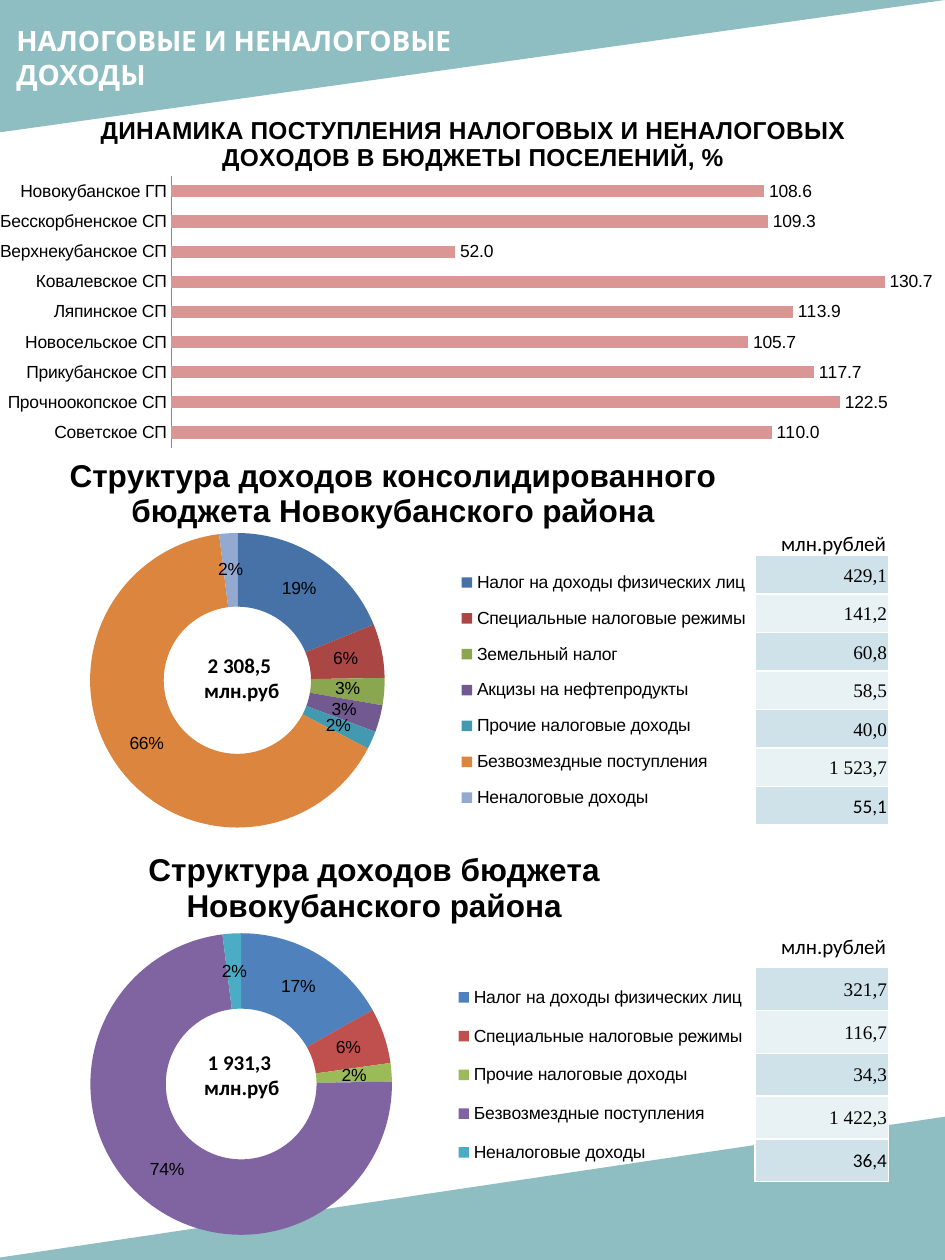
import pptx
import pptx.util
import pptx.chart.data
import pptx.dml.color
import pptx.enum.chart
import pptx.enum.shapes
import pptx.enum.text
import pptx.oxml
import pptx.oxml.ns
from lxml import etree

Inches = pptx.util.Inches
Pt = pptx.util.Pt
RGBColor = pptx.dml.color.RGBColor
Align = pptx.enum.text.PP_ALIGN
Anchor = pptx.enum.text.MSO_ANCHOR
Fit = pptx.enum.text.MSO_AUTO_SIZE
Kind = pptx.enum.chart.XL_CHART_TYPE
qn = pptx.oxml.ns.qn

TEAL = RGBColor(0x51, 0x9A, 0xA0)
WHITE = RGBColor(0xFF, 0xFF, 0xFF)
BLACK = RGBColor(0, 0, 0)
NAVY = RGBColor(0x10, 0x24, 0x3E)
GREY = RGBColor(0x87, 0x87, 0x87)
PINK = RGBColor(0xD9, 0x96, 0x94)
BANDS = RGBColor(0xCF, 0xE2, 0xEA), RGBColor(0xE8, 0xF1, 0xF4)
DEEP = [RGBColor.from_string(c) for c in (
    "4672A8", "AA4644", "8AA64F", "725990", "4299B0", "DC853E", "93A9CF")]
BRIGHT = [RGBColor.from_string(c) for c in (
    "4F81BD", "C0504D", "9BBB59", "8064A2", "4BACC6")]

TOWNS = {
    "Новокубанское ГП": 108.6, "Бесскорбненское СП": 109.3,
    "Верхнекубанское СП": 52.0, "Ковалевское СП": 130.7,
    "Ляпинское СП": 113.9, "Новосельское СП": 105.7,
    "Прикубанское СП": 117.7, "Прочноокопское СП": 122.5,
    "Советское СП": 110.0}
WHOLE = {
    "Налог на доходы физических лиц": 19, "Специальные налоговые режимы": 6,
    "Земельный налог": 3, "Акцизы на нефтепродукты": 3,
    "Прочие налоговые доходы": 2, "Безвозмездные поступления": 66,
    "Неналоговые доходы": 2}
LOCAL = {
    "Налог на доходы физических лиц": 17, "Специальные налоговые режимы": 6,
    "Прочие налоговые доходы": 2, "Безвозмездные поступления": 74,
    "Неналоговые доходы": 2}


def style(font, size, name, color=BLACK, bold=False):
    font.size = Pt(size)
    font.name = name
    font.bold = bold
    font.color.rgb = color


def add_run(para, text, size, name, color=BLACK, bold=False):
    run = para.add_run()
    run.text = text
    style(run.font, size, name, color, bold)


def add_wedge(slide, box, flip):
    kind = pptx.enum.shapes.MSO_SHAPE.RIGHT_TRIANGLE
    shape = slide.shapes.add_shape(kind, *map(Inches, box))
    shape.rotation = 180
    shape._element.spPr.xfrm.set(flip, "1")
    shape.shadow.inherit = False
    shape.line.fill.background()
    shape.fill.solid()
    shape.fill.fore_color.rgb = TEAL
    tint = shape._element.spPr.find(".//" + qn("a:srgbClr"))
    etree.SubElement(tint, qn("a:alpha")).set("val", "64000")


def add_title(slide, text):
    title = slide.shapes.title
    title.left, title.top, title.width, title.height = map(
        Inches, (0.03, 0.14, 4.51, 0.63))
    frame = title.text_frame
    frame.word_wrap = True
    frame.auto_size = Fit.NONE
    frame.vertical_anchor = Anchor.TOP
    para = frame.paragraphs[0]
    para.alignment = Align.LEFT
    add_run(para, text, 16, "Karla", WHITE, True)


def add_unit(slide, top):
    box = slide.shapes.add_textbox(*map(Inches, (6.1, top, 1.05, 0.3)))
    frame = box.text_frame
    frame.word_wrap = False
    frame.auto_size = Fit.SHAPE_TO_FIT_TEXT
    add_run(frame.paragraphs[0], "млн.рублей", 12, "Calibri")


def add_total(slide, top, total, gap):
    box = slide.shapes.add_textbox(*map(Inches, (1.46, top, 0.88, 0.5)))
    frame = box.text_frame
    frame.word_wrap = True
    first, last = frame.paragraphs[0], frame.add_paragraph()
    first.alignment = last.alignment = Align.CENTER
    add_run(first, total, 12, "Calibri", bold=True)
    add_run(last, " ", 12, "Calibri", gap, True)
    add_run(last, "млн.руб", 12, "Calibri", bold=True)


def add_edges(cell):
    props = cell._tc.get_or_add_tcPr()
    for i, side in enumerate(("lnL", "lnR", "lnT", "lnB")):
        props.insert(i, pptx.oxml.parse_xml(
            f'<a:{side} {pptx.oxml.ns.nsdecls("a")} w="12192"><a:solidFill>'
            f'<a:srgbClr val="{WHITE}"/></a:solidFill></a:{side}>'))


def add_sums(slide, top, high, sums):
    count = len(sums)
    frame = slide.shapes.add_table(
        count, 1, *map(Inches, (5.99, top, 1.06, high)))
    table = frame.table
    table.first_row = table.horz_banding = False
    for i, text in enumerate(sums):
        table.rows[i].height = Inches(high / count)
        cell = table.cell(i, 0)
        cell.fill.solid()
        cell.fill.fore_color.rgb = BANDS[i % 2]
        cell.vertical_anchor = Anchor.MIDDLE
        cell.margin_left = cell.margin_right = cell.margin_top = Inches(0.01)
        cell.margin_bottom = 0
        add_edges(cell)
        para = cell.text_frame.paragraphs[0]
        para.alignment = Align.RIGHT
        name = "Calibri" if i == count - 1 else "Times New Roman"
        add_run(para, text, 11, name)


def place(part, index, box, inner=False):
    for old in part.findall(qn("c:layout")):
        part.remove(old)
    layout = etree.Element(qn("c:layout"))
    manual = etree.SubElement(layout, qn("c:manualLayout"))
    pairs = [("layoutTarget", "inner")] if inner else []
    pairs += [("xMode", "edge"), ("yMode", "edge")]
    pairs += zip("xywh", map(str, box))
    for tag, val in pairs:
        etree.SubElement(manual, qn("c:" + tag)).set("val", val)
    part.insert(index, layout)


def add_chart(slide, kind, box, data, title, size, area):
    source = pptx.chart.data.CategoryChartData()
    source.categories = list(data)
    source.add_series("Series 1", list(data.values()))
    chart = slide.shapes.add_chart(kind, *map(Inches, box), source).chart
    style(chart.font, 10, "Arial")
    chart.has_title = True
    para = chart.chart_title.text_frame.paragraphs[0]
    add_run(para, title, size, "Arial", bold=True)
    chart.has_legend = False
    root = chart._chartSpace
    clear = pptx.oxml.parse_xml(
        f'<c:spPr {pptx.oxml.ns.nsdecls("c", "a")}><a:noFill/>'
        '<a:ln><a:noFill/></a:ln></c:spPr>')
    root.find(qn("c:chart")).addnext(clear)
    place(root.find(".//" + qn("c:plotArea")), 0, area, True)
    plot = chart.plots[0]
    plot.has_data_labels = True
    labels = plot.data_labels
    labels.show_value = True
    labels.show_percentage = False
    labels.number_format_is_linked = False
    style(labels.font, 10, "Arial")
    return chart


def add_bars(slide, box, data, title, area):
    chart = add_chart(slide, Kind.BAR_CLUSTERED, box, data, title, 14, area)
    plot = chart.plots[0]
    plot.vary_by_categories = False
    plot.gap_width = 150
    plot.overlap = -25
    plot.data_labels.number_format = "0.0"
    fill = plot.series[0].format.fill
    fill.solid()
    fill.fore_color.rgb = PINK
    axis = chart.category_axis
    axis.reverse_order = True
    axis.major_tick_mark = pptx.enum.chart.XL_TICK_MARK.NONE
    axis.format.line.color.rgb = GREY
    scale = chart.value_axis
    scale.visible = False
    scale.has_major_gridlines = False
    scale.minimum_scale, scale.maximum_scale = 0, 140


def add_ring(slide, box, data, title, area, key, colors):
    chart = add_chart(slide, Kind.DOUGHNUT, box, data, title, 18, area)
    plot = chart.plots[0]
    plot.vary_by_categories = True
    plot.data_labels.number_format = '0"%"'
    for i, color in enumerate(colors):
        fill = plot.series[0].points[i].format.fill
        fill.solid()
        fill.fore_color.rgb = color
    chart.has_legend = True
    legend = chart.legend
    legend.position = pptx.enum.chart.XL_LEGEND_POSITION.RIGHT
    legend.include_in_layout = False
    style(legend.font, 10, "Arial")
    place(legend._element, 1, key)


def main():
    deck = pptx.Presentation()
    deck.slide_width, deck.slide_height = Inches(7.5), Inches(10)
    slide = deck.slides.add_slide(deck.slide_layouts[5])
    add_wedge(slide, (0, 0, 7.5, 1.05), "flipH")
    add_wedge(slide, (-0.13, 8.86, 7.65, 1.14), "flipV")
    title = slide.shapes.title._element
    title.getparent().append(title)
    add_title(slide, "НАЛОГОВЫЕ И НЕНАЛОГОВЫЕ ДОХОДЫ")
    add_unit(slide, 4.16)
    add_unit(slide, 7.36)
    add_sums(slide, 4.41, 2.14, (
        "429,1", "141,2", "60,8", "58,5", "40,0", "1 523,7", "55,1"))
    add_sums(slide, 7.68, 1.7, ("321,7", "116,7", "34,3", "1 422,3", "36,4"))
    add_total(slide, 5.13, "2 308,5", NAVY)
    add_total(slide, 8.28, "1 931,3", BLACK)
    add_bars(slide, (0, 0.76, 7.5, 2.91), TOWNS,
             "ДИНАМИКА ПОСТУПЛЕНИЯ НАЛОГОВЫХ И НЕНАЛОГОВЫХ "
             "ДОХОДОВ В БЮДЖЕТЫ ПОСЕЛЕНИЙ, %", (0.18, 0.22, 0.81, 0.74))
    add_ring(slide, (-0.22, 3.45, 6.68, 3.12), WHOLE,
             "Структура доходов консолидированного бюджета "
             "Новокубанского района", (0.14, 0.25, 0.35, 0.75),
             (0.57, 0.31, 0.36, 0.68), DEEP)
    add_ring(slide, (-0.55, 6.57, 7.04, 3.6), LOCAL,
             "Структура доходов бюджета Новокубанского района",
             (0.18, 0.23, 0.34, 0.67), (0.58, 0.31, 0.35, 0.47), BRIGHT)
    deck.save("out.pptx")


if __name__ == "__main__":
    main()
